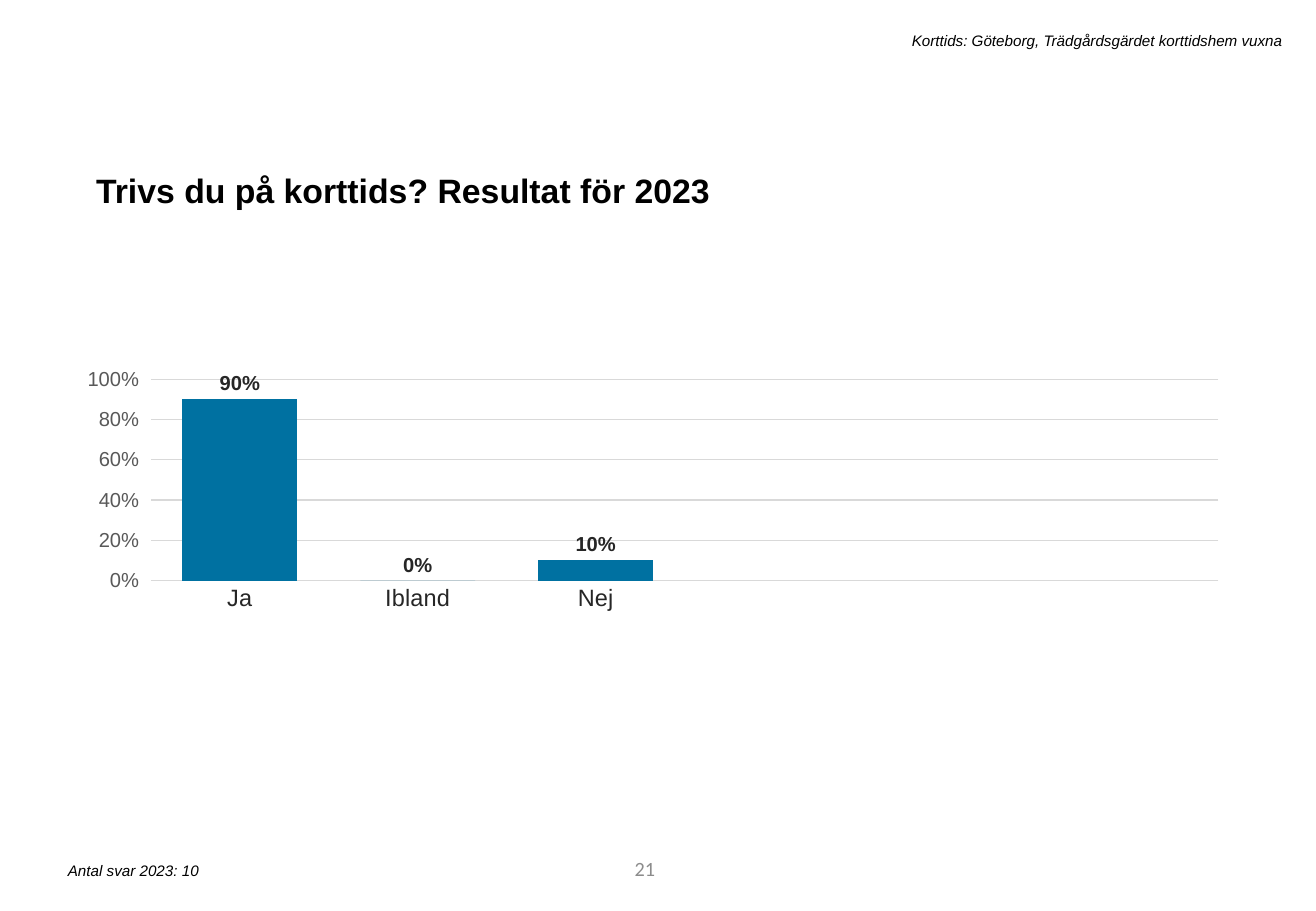
from lxml.etree import SubElement
from pptx import Presentation
from pptx.chart.data import CategoryChartData
from pptx.dml.color import RGBColor
from pptx.enum.chart import XL_CHART_TYPE, XL_LABEL_POSITION, XL_TICK_MARK
from pptx.enum.text import MSO_ANCHOR, MSO_AUTO_SIZE, PP_ALIGN
from pptx.oxml.ns import qn
from pptx.util import Inches, Pt


def paint(code):
    return RGBColor.from_string(code)


class Page:
    """Hold the survey style and the current slide."""

    face = "Arial"
    ink, dark, gray, pale, blue = "000000", "262626", "595959", "D9D9D9", "0071A1"

    def __init__(self, deck):
        self.slide = deck.slides.add_slide(deck.slide_layouts[5])

    def style(self, font, size, color=ink, bold=False, italic=False, face=face):
        font.name, font.size = face, Pt(size)
        font.bold, font.italic = bold, italic
        font.color.rgb = paint(color)

    def rule(self, line):
        line.color.rgb = paint(self.pale)
        line.width = Pt(0.75)

    def label(self, shape, text, box, size, align=PP_ALIGN.LEFT,
              anchor=MSO_ANCHOR.TOP, **look):
        shape.left, shape.top, shape.width, shape.height = map(Inches, box)
        frame = shape.text_frame
        frame.text = text
        frame.word_wrap = True
        frame.auto_size = MSO_AUTO_SIZE.NONE
        frame.vertical_anchor = anchor
        para = frame.paragraphs[0]
        para.alignment = align
        self.style(para.font, size, **look)
        return para

    def title(self, text, box):
        para = self.label(self.slide.shapes.title, text, box, 20, bold=True)
        para.line_spacing = 1.2
        para.space_before = Pt(10)

    def note(self, text, box, size=9, **look):
        shape = self.slide.shapes.add_textbox(*map(Inches, box))
        self.label(shape, text, box, size, **look)

    def place(self, chart, spot):
        area = chart.plots[0]._element.getparent()
        for old in area.findall(qn("c:layout")):
            area.remove(old)
        layout = SubElement(area, qn("c:layout"))
        area.insert(0, layout)
        manual = SubElement(layout, qn("c:manualLayout"))
        pairs = [("layoutTarget", "inner"), ("xMode", "edge"), ("yMode", "edge")]
        pairs += zip("xywh", spot)
        for tag, val in pairs:
            SubElement(manual, qn(f"c:{tag}")).set("val", str(val))

    def bars(self, cats, vals, box, spot):
        data = CategoryChartData(number_format="0%")
        data.categories = cats
        data.add_series("Series 1", vals)
        chart = self.slide.shapes.add_chart(
            XL_CHART_TYPE.COLUMN_CLUSTERED, *map(Inches, box), data).chart
        chart.has_legend = chart.has_title = False
        self.style(chart.font, 10)
        self.place(chart, spot)

        plot = chart.plots[0]
        plot.gap_width = 55
        plot.vary_by_categories = False
        fill = plot.series[0].format.fill
        fill.solid()
        fill.fore_color.rgb = paint(self.blue)

        tags = plot.series[0].data_labels
        tags.show_value = True
        tags.position = XL_LABEL_POSITION.OUTSIDE_END
        tags.number_format = "0%"
        tags.number_format_is_linked = False
        self.style(tags.font, 12, self.dark, bold=True)

        base = chart.category_axis
        base.major_tick_mark = XL_TICK_MARK.NONE
        self.style(base.tick_labels.font, 14, self.dark)
        self.rule(base.format.line)

        scale = chart.value_axis
        scale.minimum_scale, scale.maximum_scale = 0, 1
        scale.major_unit = 0.2
        scale.major_tick_mark = XL_TICK_MARK.OUTSIDE
        scale.tick_labels.number_format = "0%"
        scale.tick_labels.number_format_is_linked = False
        self.style(scale.tick_labels.font, 12, self.gray)
        scale.format.line.fill.background()
        self.rule(scale.major_gridlines.format.line)


def main():
    deck = Presentation()
    deck.slide_width, deck.slide_height = Inches(10.83), Inches(7.5)
    page = Page(deck)
    page.title("Trivs du på korttids? Resultat för 2023", (0.69, 1.28, 9.4, 0.47))
    page.note("Korttids: Göteborg, Trädgårdsgärdet korttidshem vuxna",
              (1.79, 0.21, 8.86, 0.25), align=PP_ALIGN.RIGHT, italic=True)
    page.bars(["Ja", "Ibland", "Nej", "", "", ""], [0.9, 0, 0.1, None, None, None],
              (0.72, 2.53, 9.4, 3.95), (0.05, 0.15, 0.94, 0.42))
    page.note("Antal svar 2023: 10", (0.46, 7.04, 4.41, 0.25), italic=True)
    page.note("21", (3.05, 6.95, 2.44, 0.4), 12, align=PP_ALIGN.RIGHT,
              anchor=MSO_ANCHOR.MIDDLE, color="8C8C8C", face="Calibri")
    deck.save("out.pptx")


if __name__ == "__main__":
    main()
